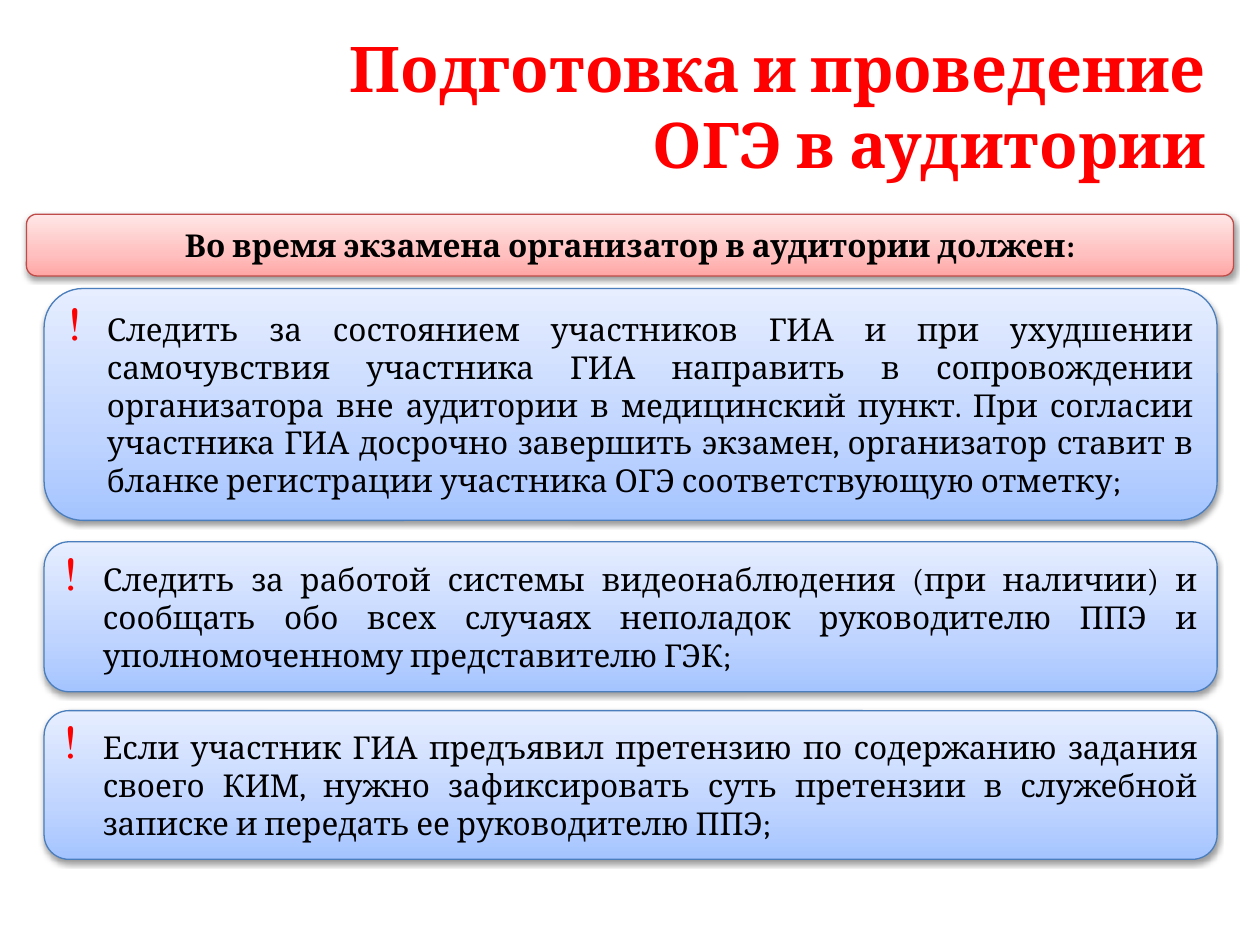
from lxml import etree
from pptx import Presentation
from pptx.dml.color import RGBColor
from pptx.enum.shapes import MSO_SHAPE as Shape
from pptx.enum.text import MSO_ANCHOR as Anchor, PP_ALIGN as Align
from pptx.oxml.ns import qn
from pptx.util import Inches, Pt

FONT = "Cambria"
RED = "FF0000"
BLACK = "000000"
PINK_STOPS = [(0, "FFA6A5"), (35, "FFC0BF"), (100, "FFE7E7")]
BLUE_STOPS = [(0, "A4C4FF"), (35, "BFD4FF"), (100, "E6EEFF")]
DUTIES = [
    (2.29, 1.84, "Следить за состоянием участников ГИА и при ухудшении "
     "самочувствия участника ГИА направить в сопровождении организатора вне "
     "аудитории в медицинский пункт. При согласии участника ГИА досрочно "
     "завершить экзамен, организатор ставит в бланке регистрации участника "
     "ОГЭ соответствующую отметку;"),
    (4.3, 1.19, "Следить за работой системы видеонаблюдения (при наличии) и "
     "сообщать обо всех случаях неполадок руководителю ППЭ и "
     "уполномоченному представителю ГЭК;"),
    (5.64, 1.18, "Если участник ГИА предъявил претензию по содержанию задания "
     "своего КИМ, нужно зафиксировать суть претензии в служебной записке и "
     "передать ее руководителю ППЭ;"),
]


def rgb(value):
    return RGBColor.from_string(value)


def add_element(parent, tag, **attributes):
    element = etree.SubElement(parent, qn(tag))
    for name, value in attributes.items():
        element.set(name, str(value))
    return element


def set_bullet(paragraph, character, color):
    """Hang an enlarged coloured bullet in front of the paragraph."""
    properties = paragraph._p.get_or_add_pPr()
    properties.set("marL", str(Inches(0.31)))
    properties.set("indent", str(-Inches(0.31)))
    add_element(add_element(properties, "a:buClr"), "a:srgbClr", val=color)
    add_element(properties, "a:buSzPct", val=150000)
    add_element(properties, "a:buChar", char=character)


def write_text(shape, text, size=18, color=BLACK, bold=False,
               align=Align.CENTER, bullet=None):
    frame = shape.text_frame
    frame.word_wrap = True
    frame.vertical_anchor = Anchor.MIDDLE
    paragraph = frame.paragraphs[0]
    paragraph.text = text
    paragraph.alignment = align
    if bullet:
        set_bullet(paragraph, bullet, RED)
    for run in paragraph.runs:
        run.font.name = FONT
        run.font.size = Pt(size)
        run.font.bold = bold
        run.font.color.rgb = rgb(color)


def set_gradient(shape, stops):
    """Fill with colour stops running from bottom to top."""
    shape.fill.gradient()
    shape.fill.gradient_angle = 90
    stop_list = shape._element.spPr.find(".//" + qn("a:gsLst"))
    for stop in list(stop_list):
        stop_list.remove(stop)
    for percent, color in stops:
        stop = add_element(stop_list, "a:gs", pos=percent * 1000)
        add_element(stop, "a:srgbClr", val=color)


def set_shadow(shape):
    shape.shadow.inherit = False
    effects = shape._element.spPr.find(qn("a:effectLst"))
    shadow = add_element(effects, "a:outerShdw", blurRad=Pt(3.1), dist=Pt(1.6),
                         dir=5400000, rotWithShape=0)
    color = add_element(shadow, "a:srgbClr", val=BLACK)
    add_element(color, "a:alpha", val=38000)


def add_panel(slide, left, top, width, height, stops, line, text, **text_format):
    panel = slide.shapes.add_shape(Shape.ROUNDED_RECTANGLE, Inches(left),
                                   Inches(top), Inches(width), Inches(height))
    set_gradient(panel, stops)
    panel.line.color.rgb = rgb(line)
    panel.line.width = Pt(0.75)
    set_shadow(panel)
    write_text(panel, text, **text_format)


def add_title(slide, text):
    title = slide.shapes.add_textbox(Inches(0.67), Inches(0.21),
                                     Inches(9), Inches(1.25))
    write_text(title, text, size=36, color=RED, bold=True, align=Align.RIGHT)


def main():
    presentation = Presentation()
    presentation.slide_width = Inches(10)
    presentation.slide_height = Inches(7.5)
    slide = presentation.slides.add_slide(presentation.slide_layouts[6])

    add_title(slide, "Подготовка и проведение\vОГЭ в аудитории")
    add_panel(slide, 0.21, 1.7, 9.58, 0.49, PINK_STOPS, "BF4C48",
              "Во время экзамена организатор в аудитории должен:", bold=True)
    for top, height, duty in DUTIES:
        add_panel(slide, 0.35, top, 9.31, height, BLUE_STOPS, "4B7EBC",
                  duty, align=Align.JUSTIFY, bullet="!")
    presentation.save("out.pptx")


if __name__ == "__main__":
    main()
